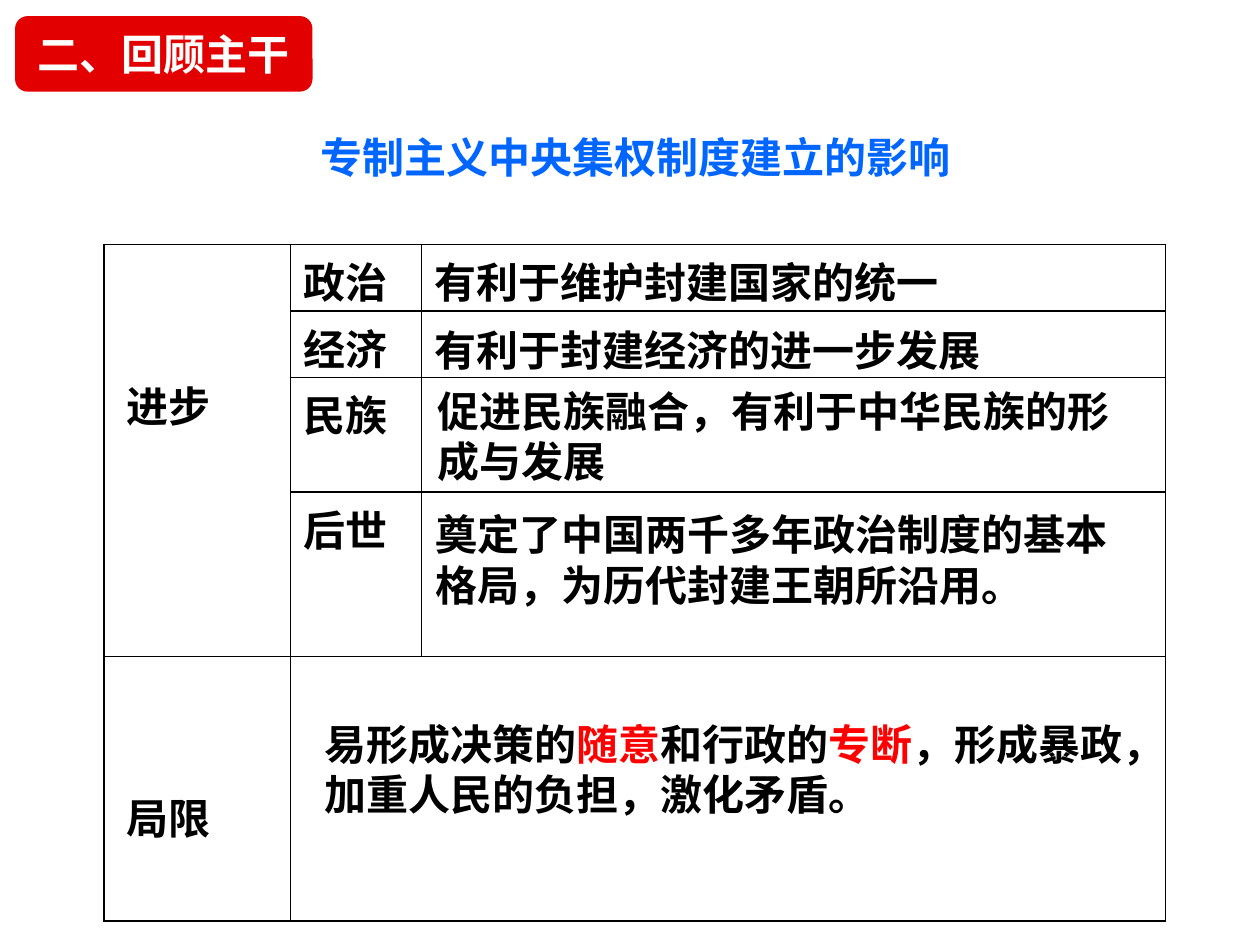
from dataclasses import dataclass

from lxml import etree
from pptx import Presentation
from pptx.dml.color import RGBColor
from pptx.enum import shapes, text
from pptx.oxml import ns
from pptx.util import Pt


@dataclass(frozen=True)
class Theme:
    font: str = "Noto Sans CJK SC"
    size: float = 24
    black: str = "000000"
    white: str = "FFFFFF"
    blue: str = "0066FF"
    red: str = "FF0000"
    badge: str = "E20000"
    border: float = 1


@dataclass(frozen=True)
class Note:
    left: float
    top: float
    width: float
    height: float
    runs: tuple[tuple[str, str], ...]


@dataclass(frozen=True)
class Label:
    row: int
    col: int
    words: str
    left: float
    top: float
    bottom: float = 0
    anchor: text.MSO_ANCHOR = text.MSO_ANCHOR.TOP


THEME = Theme()
COLS = (106.5, 75, 425)
ROWS = (38, 38, 65.5, 94, 151)

# The merged label sits above the middle, so its row need not grow
LABELS = (
    Label(0, 0, "进步", 12.8, 0, 53, text.MSO_ANCHOR.MIDDLE),
    *(Label(i, 1, words, 7.2, 3.2)
      for i, words in enumerate(("政治", "经济", "民族", "后世"))),
    Label(4, 0, "局限", 12.8, 74),
)


def plain(words: str) -> tuple[tuple[str, str], ...]:
    return ((words, THEME.black),)


NOTES = (
    Note(241.2, 143.3, 476.6, 36, plain("有利于维护封建国家的统一")),
    Note(241.2, 182, 476.6, 36, plain("有利于封建经济的进一步发展")),
    Note(242.9, 216.7, 408.2, 65.5,
         plain("促进民族融合，有利于中华民族的形成与发展")),
    Note(241.9, 287.3, 408.2, 65.5,
         plain("奠定了中国两千多年政治制度的基本格局，为历代封建王朝所沿用。")),
    Note(178.6, 406.8, 476, 65.5, (
        ("易形成决策的", THEME.black),
        ("随意", THEME.red),
        ("和行政的", THEME.black),
        ("专断", THEME.red),
        ("，形成暴政，加重人民的负担，激化矛盾。", THEME.black),
    )),
)


def write(p, runs: tuple[tuple[str, str], ...]) -> None:
    for words, color in runs:
        r = p.add_run()
        r.text = words
        f = r.font
        f.name, f.size, f.bold = THEME.font, Pt(THEME.size), True
        f.color.rgb = RGBColor.from_string(color)
        # East Asian typeface
        etree.SubElement(r._r.get_or_add_rPr(), ns.qn("a:ea"),
                         typeface=THEME.font)


def draw_badge(s, words: str) -> None:
    sp = s.shapes.add_shape(shapes.MSO_SHAPE.ROUNDED_RECTANGLE,
                            Pt(8.6), Pt(9.2), Pt(170), Pt(43.2))
    sp.shadow.inherit = False
    sp.fill.solid()
    sp.fill.fore_color.rgb = RGBColor.from_string(THEME.badge)
    sp.line.fill.background()
    tf = sp.text_frame
    tf.vertical_anchor = text.MSO_ANCHOR.MIDDLE
    p = tf.paragraphs[0]
    p.alignment = text.PP_ALIGN.CENTER
    write(p, ((words, THEME.white),))


def draw_title(s, words: str) -> None:
    sp = s.shapes.title
    sp.left, sp.top, sp.width, sp.height = Pt(176), Pt(71.3), Pt(394), Pt(36)
    tf = sp.text_frame
    tf.auto_size = text.MSO_AUTO_SIZE.NONE
    tf.vertical_anchor = text.MSO_ANCHOR.TOP
    p = tf.paragraphs[0]
    p.alignment = text.PP_ALIGN.LEFT
    write(p, ((words, THEME.blue),))


def add_borders(cell) -> None:
    tcPr = cell._tc.get_or_add_tcPr()
    for i, side in enumerate(("lnL", "lnR", "lnT", "lnB")):
        ln = etree.Element(ns.qn(f"a:{side}"), w=str(Pt(THEME.border)))
        fill = etree.SubElement(ln, ns.qn("a:solidFill"))
        etree.SubElement(fill, ns.qn("a:srgbClr"), val=THEME.black)
        tcPr.insert(i, ln)


def draw_table(s) -> None:
    table = s.shapes.add_table(len(ROWS), len(COLS), Pt(59.5), Pt(139.7),
                               Pt(sum(COLS)), Pt(sum(ROWS))).table
    table.first_row = table.horz_banding = False
    for column, width in zip(table.columns, COLS):
        column.width = Pt(width)
    for row, height in zip(table.rows, ROWS):
        row.height = Pt(height)
    for cell in table.iter_cells():
        cell.fill.background()
        add_borders(cell)
    table.cell(0, 0).merge(table.cell(3, 0))
    table.cell(4, 1).merge(table.cell(4, 2))
    for label in LABELS:
        cell = table.cell(label.row, label.col)
        cell.margin_left = Pt(label.left)
        cell.margin_top, cell.margin_bottom = Pt(label.top), Pt(label.bottom)
        cell.vertical_anchor = label.anchor
        write(cell.text_frame.paragraphs[0], plain(label.words))


def draw_note(s, note: Note) -> None:
    sp = s.shapes.add_textbox(Pt(note.left), Pt(note.top),
                              Pt(note.width), Pt(note.height))
    tf = sp.text_frame
    tf.word_wrap = True
    write(tf.paragraphs[0], note.runs)


def main() -> None:
    prs = Presentation()
    prs.slide_width, prs.slide_height = Pt(720), Pt(540)
    s = prs.slides.add_slide(prs.slide_layouts[5])  # title only

    # Section badge and heading
    draw_badge(s, "二、回顾主干")
    draw_title(s, "专制主义中央集权制度建立的影响")

    # Grid of effects, with the explanations laid over it
    draw_table(s)
    for note in NOTES:
        draw_note(s, note)

    prs.save("out.pptx")


if __name__ == "__main__":
    main()
